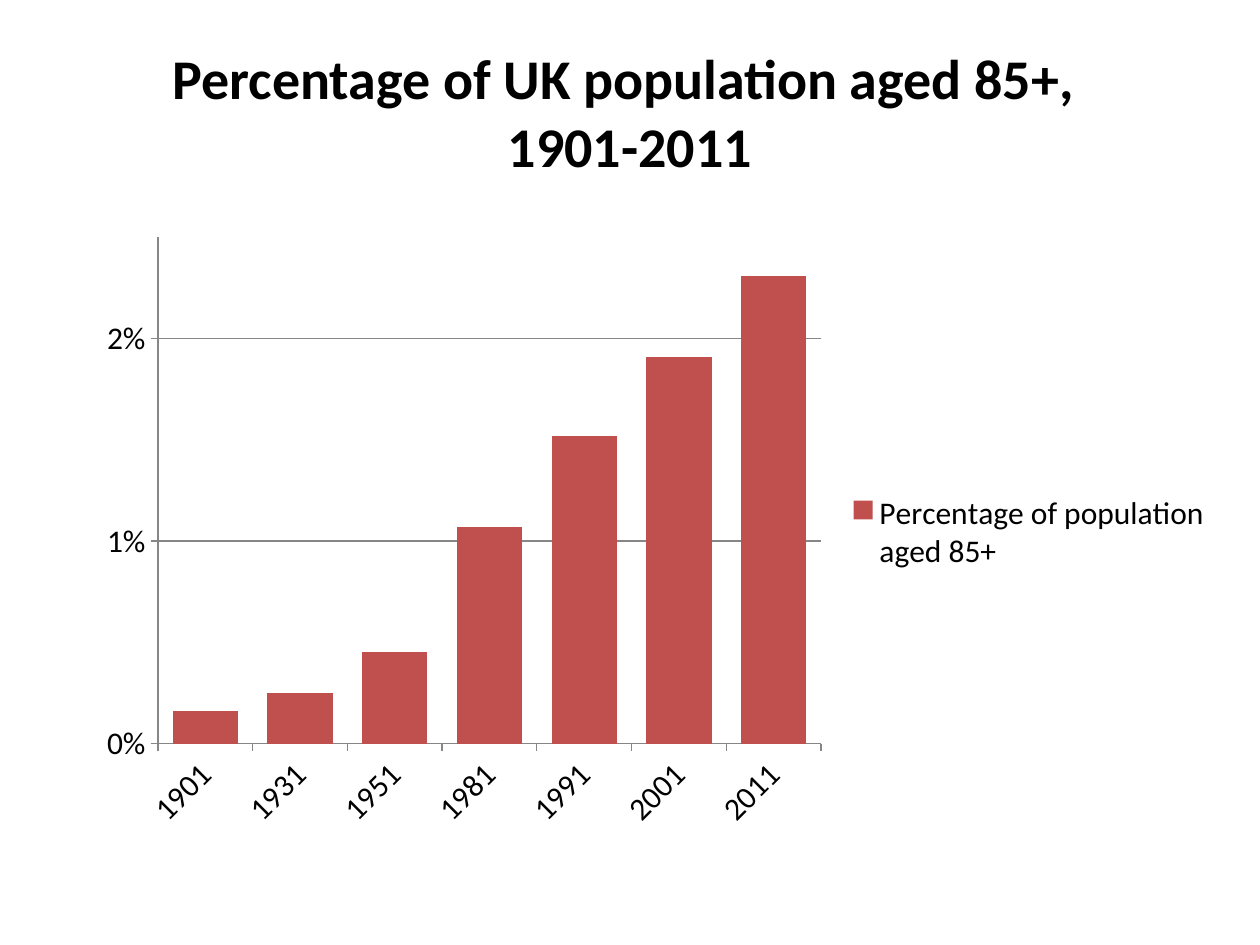
import pptx
import pptx.chart.data
import pptx.dml.color
import pptx.enum.chart
import pptx.enum.text
import pptx.oxml
import pptx.oxml.ns
import pptx.util

Pt = pptx.util.Pt

# Content
TITLE = "Percentage of UK population aged 85+, \v1901-2011"
SERIES_NAME = "Percentage of population aged 85+"
SHARES = {
    "1901": 0.0016, "1931": 0.0025, "1951": 0.0045, "1981": 0.0107,
    "1991": 0.0152, "2001": 0.0191, "2011": 0.0231,
}
FONT = "Calibri"
BLACK, GREY, RED = "000000", "868686", "C0504D"

# Places in points: left, top, width, height
TITLE_BOX = (36, 21.6, 648, 84.24)
CHART_BOX = (48.24, 128.16, 652.32, 352.08)
# Places inside the chart, in points from its corner
PLOT_AREA = (42, 7.3, 379, 289.5)
LEGEND_AREA = (435.3, 151.4, 208.7, 49.3)


def color(hex_text):
    return pptx.dml.color.RGBColor.from_string(hex_text)


def style_font(font, size, bold=False):
    font.name, font.size, font.bold = FONT, Pt(size), bold
    font.color.rgb = color(BLACK)


def add_text(slide, box, text, size, bold=False, before=0):
    frame = slide.shapes.add_textbox(*map(Pt, box)).text_frame
    frame.word_wrap = True
    paragraph = frame.paragraphs[0]
    paragraph.text = text
    paragraph.alignment = pptx.enum.text.PP_ALIGN.CENTER
    paragraph.space_before = Pt(before)
    for run in paragraph.runs:
        style_font(run.font, size, bold)


def manual_layout(area, inner=False):
    target = '<c:layoutTarget val="inner"/>' if inner else ""
    modes = "".join(f'<c:{k}Mode val="edge"/>' for k in "xy")
    spans = CHART_BOX[2:] * 2  # chart width and height, for x y w h
    sizes = "".join(f'<c:{k} val="{length / span}"/>'
                    for k, length, span in zip("xywh", area, spans))
    return pptx.oxml.parse_xml(
        f'<c:layout {pptx.oxml.ns.nsdecls("c")}><c:manualLayout>'
        f"{target}{modes}{sizes}</c:manualLayout></c:layout>")


def add_share_chart(slide):
    data = pptx.chart.data.CategoryChartData(number_format="0%")
    data.categories = list(SHARES)
    data.add_series(SERIES_NAME, list(SHARES.values()))
    chart = slide.shapes.add_chart(
        pptx.enum.chart.XL_CHART_TYPE.COLUMN_CLUSTERED,
        *map(Pt, CHART_BOX), data).chart
    chart.has_title = False
    style_font(chart.font, 18)

    # Columns
    plot = chart.plots[0]
    plot.gap_width = 45
    plot.vary_by_categories = False
    fill = plot.series[0].format.fill
    fill.solid()
    fill.fore_color.rgb = color(RED)

    # Axes
    years, percent = chart.category_axis, chart.value_axis
    percent.minimum_scale, percent.maximum_scale = 0, 0.025
    percent.major_unit = 0.01
    percent.has_major_gridlines = True
    percent.tick_labels.number_format = "0%"
    percent.tick_labels.number_format_is_linked = False
    for axis in (years, percent):
        axis.major_tick_mark = pptx.enum.chart.XL_TICK_MARK.OUTSIDE
        style_font(axis.tick_labels.font, 18)
    for line in (years.format.line, percent.format.line,
                 percent.major_gridlines.format.line):
        line.color.rgb = color(GREY)
        line.width = Pt(0.75)
    years_body = years._element.find(pptx.oxml.ns.qn("c:txPr")).bodyPr
    years_body.set("rot", str(-45 * 60000))
    years_body.set("vert", "horz")

    # Legend and fixed layout
    chart.has_legend = True
    legend = chart.legend
    legend.position = pptx.enum.chart.XL_LEGEND_POSITION.RIGHT
    legend.include_in_layout = False
    style_font(legend.font, 18)
    places = ((chart._chartSpace.chart.plotArea, PLOT_AREA, True),
              (legend._element, LEGEND_AREA, False))
    for element, area, inner in places:
        for old in element.findall(pptx.oxml.ns.qn("c:layout")):
            element.remove(old)
        index = 0 if inner else 1  # the legend's position comes first
        element.insert(index, manual_layout(area, inner))


def main():
    deck = pptx.Presentation()
    deck.slide_width, deck.slide_height = Pt(720), Pt(540)
    slide = deck.slides.add_slide(deck.slide_layouts[6])
    add_text(slide, TITLE_BOX, TITLE, size=32, bold=True, before=6.4)
    add_share_chart(slide)
    deck.save("out.pptx")


if __name__ == "__main__":
    main()
